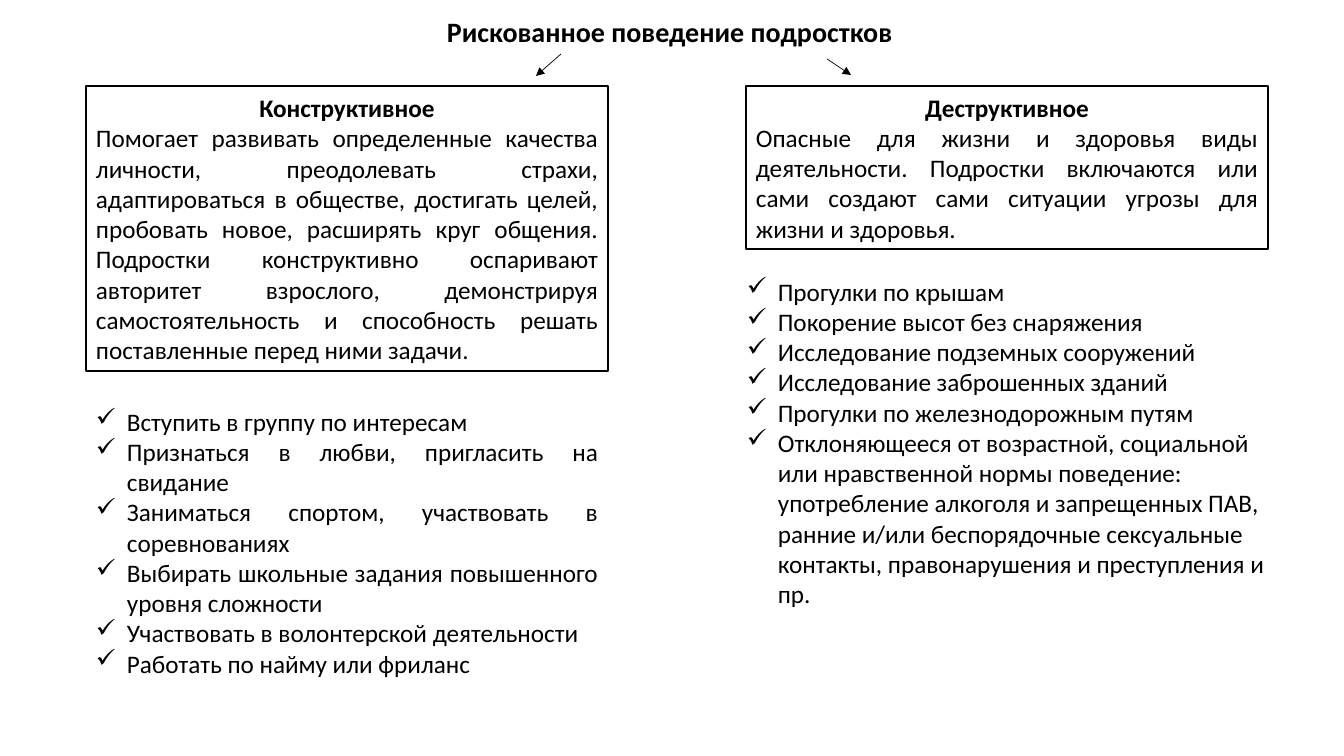
import lxml.etree
import pptx
import pptx.dml.color
import pptx.enum.shapes
import pptx.enum.text
import pptx.oxml.ns
import pptx.util

PX = 9071
FONT = "Calibri"
INK = "000000"
PAPER = "FFFFFF"
ALIGN = pptx.enum.text.PP_ALIGN
INDENT = 31

GOOD = (
    "Помогает развивать определенные качества личности, преодолевать страхи, "
    "адаптироваться в обществе, достигать целей, пробовать новое, расширять круг общения. "
    "Подростки конструктивно оспаривают авторитет взрослого, демонстрируя "
    "самостоятельность и способность решать поставленные перед ними задачи."
)
BAD = (
    "Опасные для жизни и здоровья виды деятельности. Подростки включаются или сами "
    "создают сами ситуации угрозы для жизни и здоровья."
)
GOOD_LIST = [
    "Вступить в группу по интересам",
    "Признаться в любви, пригласить на свидание",
    "Заниматься спортом, участвовать в соревнованиях",
    "Выбирать школьные задания повышенного уровня сложности",
    "Участвовать в волонтерской деятельности",
    "Работать по найму или фриланс",
]
BAD_LIST = [
    "Прогулки по крышам",
    "Покорение высот без снаряжения",
    "Исследование подземных сооружений",
    "Исследование заброшенных зданий",
    "Прогулки по железнодорожным путям",
    "Отклоняющееся от возрастной, социальной или нравственной нормы поведение: "
    "употребление алкоголя и запрещенных ПАВ, ранние и/или беспорядочные сексуальные "
    "контакты, правонарушения и преступления и пр.",
]


def emu(*px):
    """Turn pixel lengths into EMU."""
    return [pptx.util.Emu(n * PX) for n in px]


def paint(color, code):
    """Set a colour format from a hex string."""
    color.rgb = pptx.dml.color.RGBColor.from_string(code)


def add_node(parent, tag, **attrs):
    """Append an XML element to a parent and return it."""
    return lxml.etree.SubElement(parent, pptx.oxml.ns.qn(tag), **attrs)


def set_frame(shape, wrap=True):
    """Prepare a text frame that grows with its text."""
    frame = shape.text_frame
    frame.word_wrap = wrap
    frame.auto_size = pptx.enum.text.MSO_AUTO_SIZE.SHAPE_TO_FIT_TEXT
    return frame


def write(para, text, size=18, bold=False, align=ALIGN.LEFT):
    """Add one styled run to a paragraph."""
    para.alignment = align
    run = para.add_run()
    run.text = text
    run.font.name = FONT
    run.font.size = pptx.util.Pt(size)
    run.font.bold = bold
    paint(run.font.color, INK)


def add_title(slide, text, area):
    """Add the slide heading."""
    frame = set_frame(slide.shapes.add_textbox(*emu(*area)), wrap=False)
    write(frame.paragraphs[0], text, size=20, bold=True)


def add_card(slide, head, body, area):
    """Add a framed box with a bold head and justified body."""
    card = slide.shapes.add_shape(pptx.enum.shapes.MSO_SHAPE.RECTANGLE, *emu(*area))
    card.shadow.inherit = False
    card.fill.solid()
    paint(card.fill.fore_color, PAPER)
    paint(card.line.color, INK)
    card.line.width = pptx.util.Pt(1)
    frame = set_frame(card)
    write(frame.paragraphs[0], head, bold=True, align=ALIGN.CENTER)
    write(frame.add_paragraph(), body, align=ALIGN.JUSTIFY)


def add_list(slide, items, area, align):
    """Add a list with check mark bullets."""
    frame = set_frame(slide.shapes.add_textbox(*emu(*area)))
    for i, item in enumerate(items):
        para = frame.add_paragraph() if i else frame.paragraphs[0]
        write(para, item, align=align)
        props = para._p.get_or_add_pPr()
        props.set("marL", str(INDENT * PX))
        props.set("indent", str(-INDENT * PX))
        add_node(props, "a:buChar", char="✓")


def add_arrow(slide, ends):
    """Add a thin arrow between two points."""
    kind = pptx.enum.shapes.MSO_CONNECTOR.STRAIGHT
    arrow = slide.shapes.add_connector(kind, *emu(*ends))
    paint(arrow.line.color, INK)
    arrow.line.width = pptx.util.Pt(0.5)
    add_node(arrow.line._get_or_add_ln(), "a:tailEnd", type="triangle")
    add_node(arrow._element.spPr, "a:effectLst")


def main():
    """Build the slide and save it."""
    deck = pptx.Presentation()
    deck.slide_width, deck.slide_height = emu(1344, 756)
    slide = deck.slides.add_slide(deck.slide_layouts[6])
    add_title(slide, "Рискованное поведение подростков", (437, 10, 469, 44))
    add_card(slide, "Конструктивное", GOOD, (86, 86, 522, 285))
    add_card(slide, "Деструктивное", BAD, (746, 86, 522, 163))
    add_arrow(slide, (561, 54, 536, 76))
    add_arrow(slide, (827, 59, 851, 75))
    add_list(slide, GOOD_LIST, (86, 401, 522, 285), ALIGN.JUSTIFY)
    add_list(slide, BAD_LIST, (737, 271, 565, 346), ALIGN.LEFT)
    deck.save("out.pptx")


if __name__ == "__main__":
    main()
